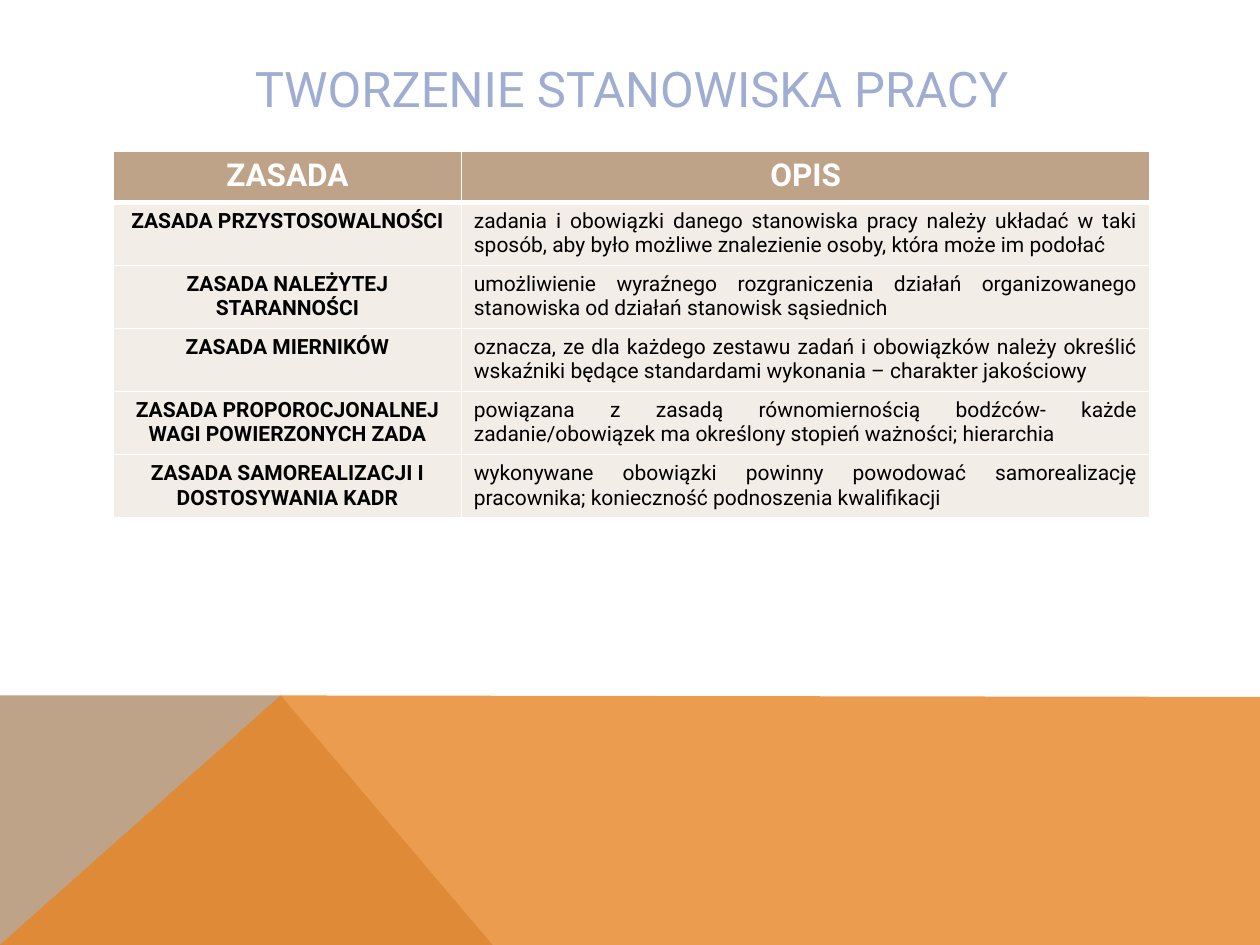
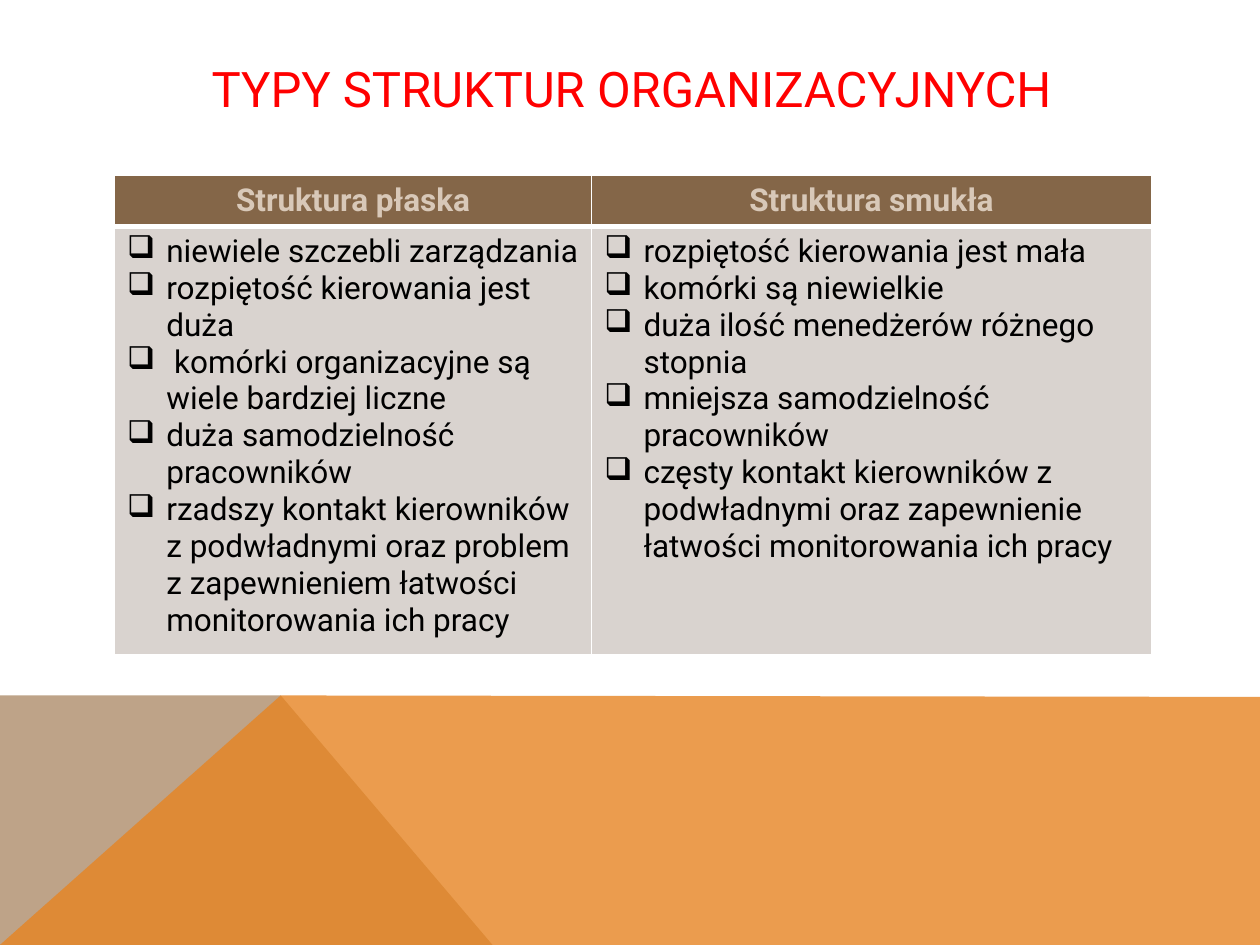
from lxml.etree import SubElement
from pptx import Presentation
from pptx.dml.color import RGBColor
from pptx.enum.text import MSO_ANCHOR, PP_ALIGN
from pptx.oxml import parse_xml
from pptx.oxml.ns import nsdecls, qn
from pptx.util import Cm, Pt

WHITE = RGBColor(0xFF, 0xFF, 0xFF)
BLACK = RGBColor(0x00, 0x00, 0x00)
RED = RGBColor(0xFF, 0x00, 0x00)
BLUE = RGBColor(0xA0, 0xAD, 0xD2)
TAN = RGBColor(0xBE, 0xA3, 0x88)
ORANGE = RGBColor(0xE6, 0x84, 0x22)
CREAM = RGBColor(0xF2, 0xED, 0xE7)
BROWN = RGBColor(0x84, 0x66, 0x48)
SAND = RGBColor(0xD8, 0xC8, 0xB8)
GREY = RGBColor(0xD9, 0xD3, 0xCF)

WIDE, HIGH = 25.4, 19.05
PEAK = (5.66, 14.02)
BANDS = [
    (TAN, 100, [(0, HIGH), (0, PEAK[1]), PEAK, (9.93, HIGH)]),
    (ORANGE, 80, [(0, HIGH), PEAK, (WIDE, 14.05), (WIDE, HIGH)]),
]

TITLE = {"name": "Roboto", "size": Pt(28), "bold": False}
HEAD = {"name": "Roboto", "size": Pt(18), "bold": True}
ITEM = {"name": "Roboto", "size": Pt(18), "bold": False}
RULE = {"name": "Roboto", "size": Pt(12), "bold": True}
NOTE = {"name": "Roboto", "size": Pt(12), "bold": False}

MID, JUST, LEFT = PP_ALIGN.CENTER, PP_ALIGN.JUSTIFY, PP_ALIGN.LEFT

PAGES = [
    {
        "title": "TWORZENIE STANOWISKA PRACY",
        "color": BLUE,
        "at": (2.29, 3.05),
        "cols": (7.01, 13.88),
        "rows": (1.03, 1.25),
        "head": (WHITE, TAN),
        "fill": CREAM,
        "body": [(RULE, MID), (NOTE, JUST)],
        "bullet": False,
        "cells": [
            ("ZASADA", "OPIS"),
            ("ZASADA PRZYSTOSOWALNOŚCI",
             "zadania i obowiązki danego stanowiska pracy należy układać w taki "
             "sposób, aby było możliwe znalezienie osoby, która może im podołać"),
            ("ZASADA NALEŻYTEJ STARANNOŚCI",
             "umożliwienie wyraźnego rozgraniczenia działań organizowanego "
             "stanowiska od działań stanowisk sąsiednich"),
            ("ZASADA MIERNIKÓW",
             "oznacza, ze dla każdego zestawu zadań i obowiązków należy określić "
             "wskaźniki będące standardami wykonania – charakter jakościowy"),
            ("ZASADA PROPOROCJONALNEJ WAGI POWIERZONYCH ZADA",
             "powiązana z zasadą równomiernością bodźców- każde "
             "zadanie/obowiązek ma określony stopień ważności; hierarchia"),
            ("ZASADA SAMOREALIZACJI I DOSTOSYWANIA KADR",
             "wykonywane obowiązki powinny powodować samorealizację "
             "pracownika; konieczność podnoszenia kwalifikacji"),
        ],
    },
    {
        "title": "TYPY STRUKTUR ORGANIZACYJNYCH",
        "color": RED,
        "at": (2.31, 3.54),
        "cols": (9.62, 11.28),
        "rows": (1.03, 8.43),
        "head": (SAND, BROWN),
        "fill": GREY,
        "body": [(ITEM, LEFT), (ITEM, LEFT)],
        "bullet": True,
        "cells": [
            ("Struktura płaska", "Struktura smukła"),
            ("niewiele szczebli zarządzania\n"
             "rozpiętość kierowania jest duża\n"
             " komórki organizacyjne są wiele bardziej liczne\n"
             "duża samodzielność pracowników\n"
             "rzadszy kontakt kierowników z podwładnymi oraz problem "
             "z zapewnieniem łatwości monitorowania ich pracy",
             "rozpiętość kierowania jest mała\n"
             "komórki są niewielkie\n"
             "duża ilość menedżerów różnego stopnia\n"
             "mniejsza samodzielność pracowników\n"
             "częsty kontakt kierowników z podwładnymi oraz zapewnienie "
             "łatwości monitorowania ich pracy"),
        ],
    },
]


def write(frame, text, form, color, align, bullet=False):
    """Fill a text frame, one paragraph for each line of text."""
    frame.word_wrap = True
    frame.text = text
    for para in frame.paragraphs:
        para.alignment = align
        if bullet:
            props = para._p.get_or_add_pPr()
            props.set("marL", str(Cm(0.79)))
            props.set("indent", str(-Cm(0.79)))
            SubElement(props, qn("a:buChar")).set("char", "❑")
        for run in para.runs:
            for key, value in form.items():
                setattr(run.font, key, value)
            run.font.color.rgb = color


def edge(cell, row):
    """Draw white cell borders, thick between the head and the body."""
    sides = {"L": 1, "R": 1, "T": 3 if row == 1 else 1, "B": 3 if row == 0 else 1}
    for spot, (side, width) in enumerate(sides.items()):
        line = parse_xml(
            f'<a:ln{side} {nsdecls("a")} w="{Pt(width)}"><a:solidFill>'
            f'<a:srgbClr val="{WHITE}"/></a:solidFill></a:ln{side}>')
        cell._tc.get_or_add_tcPr().insert(spot, line)


deck = Presentation()
deck.slide_width, deck.slide_height = Cm(WIDE), Cm(HIGH)

for page in PAGES:
    slide = deck.slides.add_slide(deck.slide_layouts[6])
    shapes = slide.shapes

    for color, alpha, points in BANDS:
        first, *rest = [(Cm(x), Cm(y)) for x, y in points]
        pen = shapes.build_freeform(*first)
        pen.add_line_segments(rest, close=True)
        band = pen.convert_to_shape()
        band.shadow.inherit = False
        band.fill.solid()
        band.fill.fore_color.rgb = color
        band.line.fill.background()
        if alpha < 100:
            tint = band._element.spPr.find(".//" + qn("a:srgbClr"))
            SubElement(tint, qn("a:alpha")).set("val", str(alpha * 1000))

    title = shapes.add_textbox(Cm(2.29), Cm(1.02), Cm(20.88), Cm(1.52)).text_frame
    title.vertical_anchor = MSO_ANCHOR.MIDDLE
    write(title, page["title"], TITLE, page["color"], MID)

    cells = page["cells"]
    head, body = page["rows"]
    highs = [head] + [body] * (len(cells) - 1)
    left, top = page["at"]
    table = shapes.add_table(
        len(cells), len(page["cols"]), Cm(left), Cm(top),
        Cm(sum(page["cols"])), Cm(sum(highs))).table
    table.first_row = table.horz_banding = False
    for col, width in zip(table.columns, page["cols"]):
        col.width = Cm(width)
    for row, high in zip(table.rows, highs):
        row.height = Cm(high)

    for r, texts in enumerate(cells):
        for c, text in enumerate(texts):
            cell = table.cell(r, c)
            form, align = page["body"][c] if r else (HEAD, MID)
            ink, fill = (BLACK, page["fill"]) if r else page["head"]
            cell.fill.solid()
            cell.fill.fore_color.rgb = fill
            edge(cell, r)
            write(cell.text_frame, text, form, ink, align, page["bullet"] and r > 0)

deck.save("out.pptx")
